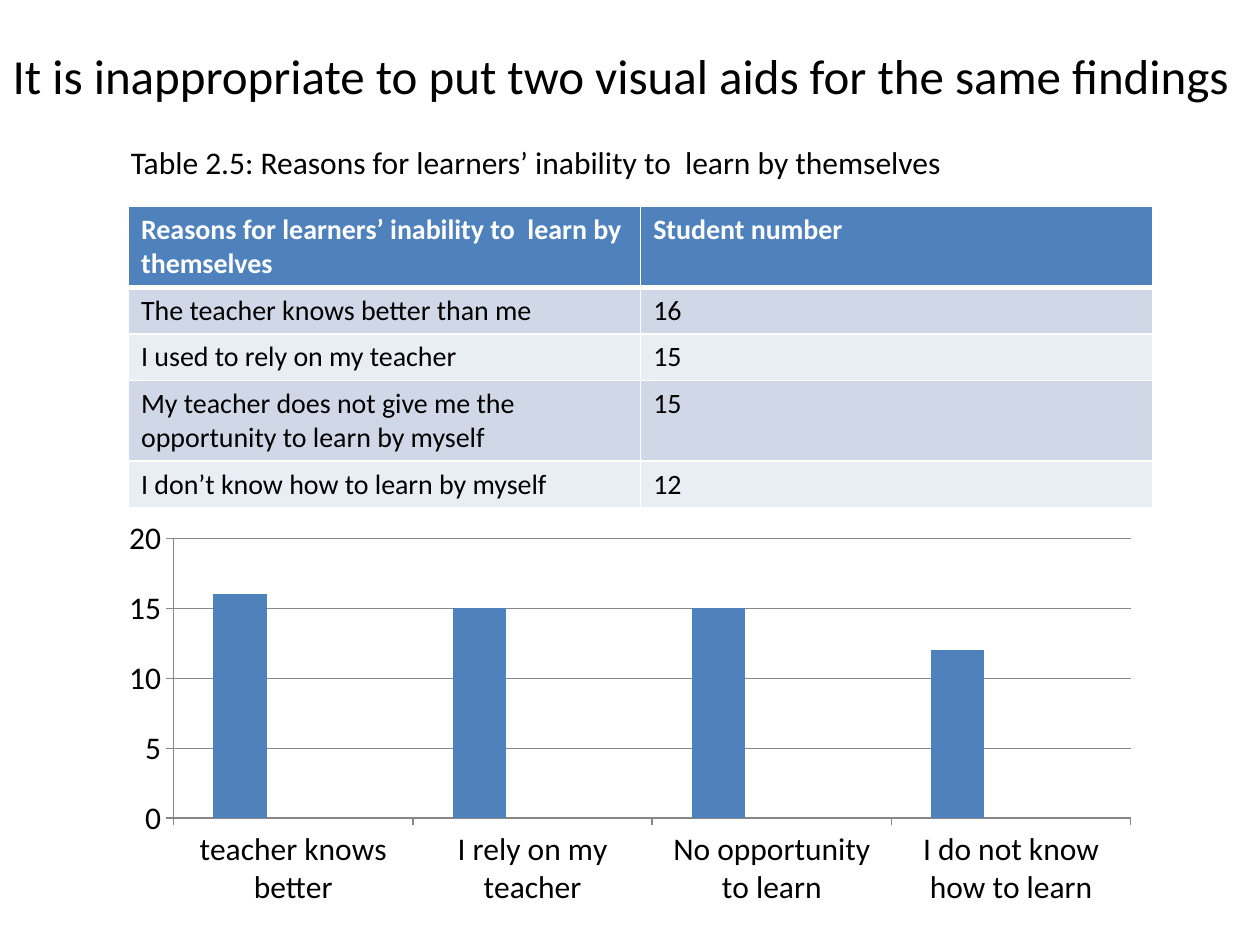
from typing import NamedTuple

from lxml import etree
from pptx import Presentation
from pptx import util as u
from pptx.chart.data import CategoryChartData
from pptx.dml.color import RGBColor
from pptx.enum import chart as ch, text
from pptx.oxml.ns import qn

BLACK = RGBColor(0, 0, 0)
WHITE = RGBColor(255, 255, 255)
BLUE = RGBColor(0x4F, 0x81, 0xBD)
RED = RGBColor(0xC0, 0x50, 0x4D)
GREEN = RGBColor(0x9B, 0xBB, 0x59)
GRAY = RGBColor(0x87, 0x87, 0x87)
BANDS = (RGBColor(0xD0, 0xD8, 0xE8), RGBColor(0xE9, 0xED, 0xF4))
FONT = "Calibri"
WIDTH, HEIGHT = u.Inches(10), u.Inches(7.5)
ONE_LINE, TWO_LINES = u.Inches(0.37), u.Inches(0.64)


class Box(NamedTuple):
    """Place on the slide, in percent of its width and height."""
    x: float
    y: float
    w: float
    h: float

    def emu(self) -> tuple:
        return tuple(int(share * side / 100)
                     for share, side in zip(self, (WIDTH, HEIGHT) * 2))


class Reason(NamedTuple):
    wording: str
    label: str
    students: int
    height: int = ONE_LINE


REASONS = [
    Reason("The teacher knows better than me", "teacher knows better", 16),
    Reason("I used to rely on my teacher", "I rely on my teacher", 15),
    Reason("My teacher does not give me the opportunity to learn by myself",
           "No opportunity to learn", 15, TWO_LINES),
    Reason("I don’t know how to learn by myself", "I do not know how to learn", 12),
]
TOPIC = "Reasons for learners’ inability to  learn by themselves"


def set_font(font, size: float, color: RGBColor = BLACK, bold: bool = False) -> None:
    for name, value in {"name": FONT, "size": u.Pt(size), "bold": bold}.items():
        setattr(font, name, value)
    font.color.rgb = color


def write(sp, words: str, box: Box, size: float) -> None:
    sp.left, sp.top, sp.width, sp.height = box.emu()
    tf = sp.text_frame
    formats = {"word_wrap": True, "vertical_anchor": text.MSO_ANCHOR.TOP,
               "auto_size": text.MSO_AUTO_SIZE.SHAPE_TO_FIT_TEXT}
    for name, value in formats.items():
        setattr(tf, name, value)
    p = tf.paragraphs[0]
    p.alignment = text.PP_ALIGN.LEFT
    r = p.add_run()
    r.text = words
    set_font(r.font, size)


def set_borders(cell, widths: dict) -> None:
    tcPr = cell._tc.get_or_add_tcPr()
    for side, width in widths.items():
        ln = etree.SubElement(tcPr, qn(f"a:ln{side}"), w=str(u.Pt(width)))
        fill = etree.SubElement(ln, qn("a:solidFill"))
        etree.SubElement(fill, qn("a:srgbClr"), val=str(WHITE))


def draw_table(s, box: Box) -> None:
    rows = [(TOPIC, "Student number")] + [(r.wording, str(r.students)) for r in REASONS]
    heights = [TWO_LINES] + [r.height for r in REASONS]
    table = s.shapes.add_table(len(rows), 2, *box.emu()).table
    for i, (row, height) in enumerate(zip(rows, heights)):
        table.rows[i].height = height
        header = i == 0
        for j, words in enumerate(row):
            cell = table.cell(i, j)
            set_borders(cell, {"L": 1, "R": 1, "T": 3 if i == 1 else 1,
                               "B": 3 if header else 1})
            cell.fill.solid()
            cell.fill.fore_color.rgb = BLUE if header else BANDS[(i - 1) % 2]
            r = cell.text_frame.paragraphs[0].add_run()
            r.text = words
            set_font(r.font, 16, WHITE if header else BLACK, header)


def draw_chart(s, box: Box) -> None:
    data = CategoryChartData()
    data.categories = [r.label for r in REASONS]
    data.add_series("Series 1", [r.students for r in REASONS])
    for name in ("Series 2", "Series 3"):
        data.add_series(name, [None] * len(REASONS))
    chart = s.shapes.add_chart(ch.XL_CHART_TYPE.COLUMN_CLUSTERED, *box.emu(), data).chart
    chart.has_legend = chart.has_title = False
    set_font(chart.font, 18)

    plot = chart.plots[0]
    plot.gap_width, plot.vary_by_categories = 150, False
    for series, color in zip(plot.series, (BLUE, RED, GREEN)):
        series.format.fill.solid()
        series.format.fill.fore_color.rgb = color

    axis = chart.value_axis
    for name, value in {"minimum_scale": 0, "maximum_scale": 20, "major_unit": 5,
                        "has_major_gridlines": True}.items():
        setattr(axis, name, value)
    for part in (axis, axis.major_gridlines, chart.category_axis):
        part.format.line.color.rgb = GRAY
        part.format.line.width = u.Pt(0.75)
    for part in (axis, chart.category_axis):
        part.major_tick_mark = ch.XL_TICK_MARK.OUTSIDE


def main() -> None:
    prs = Presentation()
    prs.slide_width, prs.slide_height = WIDTH, HEIGHT
    s = prs.slides.add_slide(prs.slide_layouts[5])

    # Chart and table of the same findings
    draw_chart(s, Box(8.6, 54.13, 82.8, 42.67))
    draw_table(s, Box(10.2, 21.87, 81.3, 31.6))

    # Table caption and slide title
    caption = Box(9.4, 14.53, 74.2, 9.47)
    write(s.shapes.add_textbox(*caption.emu()), f"Table 2.5: {TOPIC}", caption, 18)
    write(s.shapes.title, "It is inappropriate to put two visual aids for the same findings",
          Box(0, 4.13, 100, 7.6), 28)

    prs.save("out.pptx")


if __name__ == "__main__":
    main()
